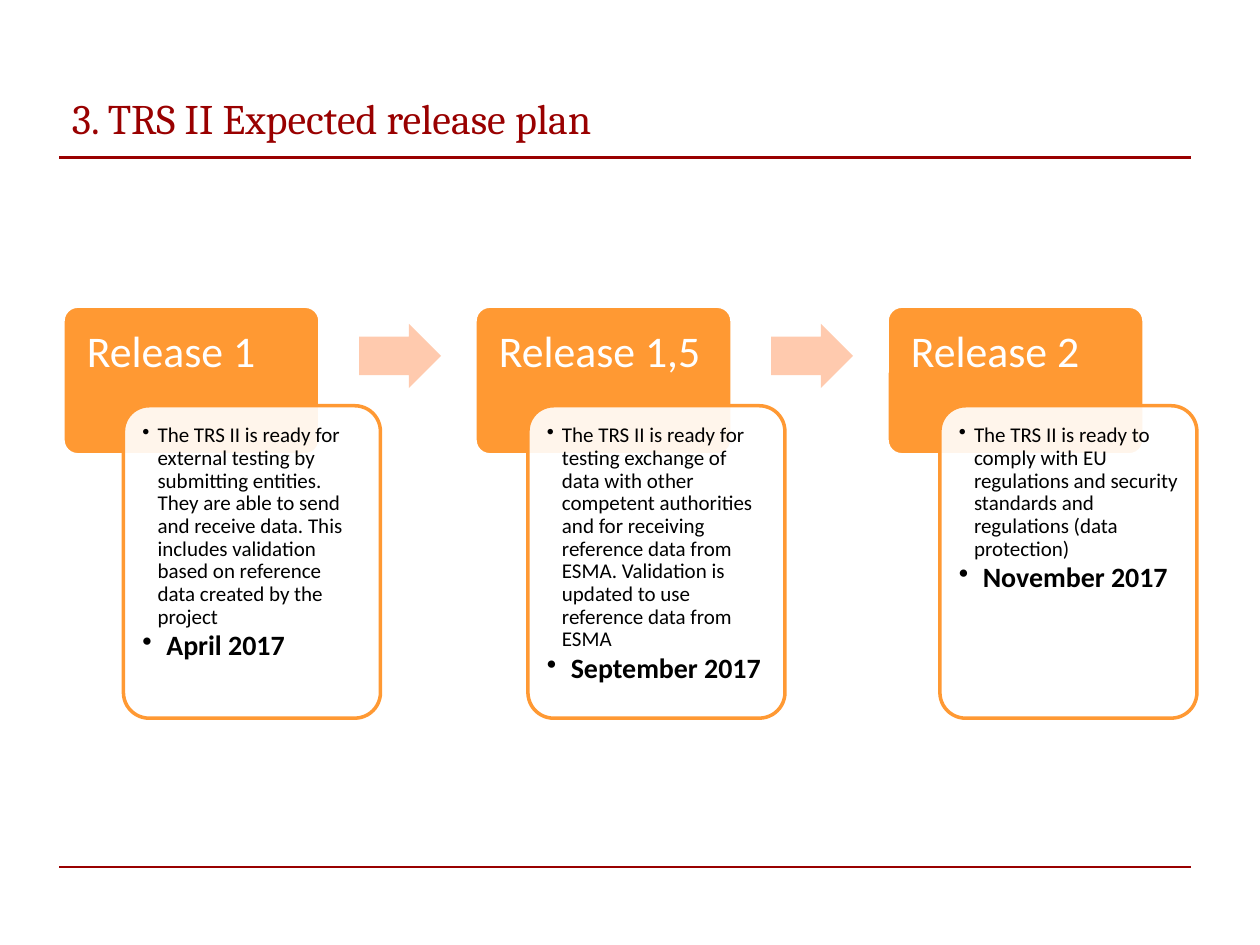
from lxml.etree import SubElement
from pptx import Presentation
from pptx.dml.color import RGBColor
from pptx.enum.shapes import MSO_CONNECTOR as Connector, MSO_SHAPE as Shape
from pptx.enum.text import MSO_ANCHOR as Anchor, PP_ALIGN as Align
from pptx.oxml.ns import qn
from pptx.util import Inches, Pt

DARK_RED = RGBColor(0x99, 0x00, 0x00)
ORANGE = RGBColor(0xFF, 0x99, 0x33)
PEACH = RGBColor(0xFF, 0xCA, 0xAE)
WHITE = RGBColor(0xFF, 0xFF, 0xFF)
BLACK = RGBColor(0x00, 0x00, 0x00)

RELEASES = [
    ("Release 1", "The TRS II is ready for external testing by submitting entities. "
     "They are able to send and receive data. This includes validation based on "
     "reference data created by the project", "April 2017", 0.48),
    ("Release 1,5", "The TRS II is ready for testing exchange of data with other "
     "competent authorities and for receiving reference data from ESMA. Validation "
     "is updated to use reference data from ESMA", "September 2017", 0.42),
    ("Release 2", "The TRS II is ready to comply with EU regulations and security "
     "standards and regulations (data protection)", "November 2017", 0.42),
]
FIRST_LEFT, PITCH = 0.5, 3.27
HEADER_TOP, CARD_TOP, ARROW_TOP = 2.43, 3.22, 2.57
BLOCK_WIDTH, CARD_PADDING = 2.04, 0.06


def write(para, text, font="Calibri", size=12, color=BLACK, bold=False,
          align=Align.LEFT, spacing=None, after=None, bullet_indent=None):
    para.alignment = align
    if spacing:
        para.line_spacing = spacing
    if after is not None:
        para.space_after = Pt(after)
    if bullet_indent:
        properties = para._p.get_or_add_pPr()
        properties.set("marL", str(Inches(bullet_indent)))
        properties.set("indent", str(-Inches(bullet_indent)))
        SubElement(properties, qn("a:buChar"), char="•")
    span = para.add_run()
    span.text = text
    span.font.name = font
    span.font.size = Pt(size)
    span.font.bold = bold
    span.font.color.rgb = color


class ReleaseSlide:
    heading_font = "Cambria"
    line_width = Pt(2)

    def __init__(self, deck):
        self.page = deck.slides.add_slide(deck.slide_layouts[5])

    def title(self, text, left, top, width, height):
        box = self.page.shapes.title
        box.left, box.top = Inches(left), Inches(top)
        box.width, box.height = Inches(width), Inches(height)
        box.text_frame.vertical_anchor = Anchor.MIDDLE
        write(box.text_frame.paragraphs[0], text, font=self.heading_font,
              size=24, color=DARK_RED)

    def rule(self, left, right, top):
        line = self.page.shapes.add_connector(
            Connector.STRAIGHT, Inches(left), Inches(top), Inches(right), Inches(top))
        line.line.color.rgb = DARK_RED
        line.line.width = Pt(1.25)
        SubElement(line._element.spPr, qn("a:effectLst"))

    def shape(self, kind, left, top, width, height, fill, outline=None,
              adjustments=(0.1,), opacity=None):
        block = self.page.shapes.add_shape(
            kind, Inches(left), Inches(top), Inches(width), Inches(height))
        block.shadow.inherit = False
        for index, value in enumerate(adjustments):
            block.adjustments[index] = value
        block.fill.solid()
        block.fill.fore_color.rgb = fill
        if opacity:
            color = block._element.spPr.find(qn("a:solidFill"))[0]
            SubElement(color, qn("a:alpha"), val=str(opacity * 1000))
        if outline is None:
            block.line.fill.background()
        else:
            block.line.color.rgb = outline
            block.line.width = self.line_width

    def text(self, left, top, width, height, insets):
        box = self.page.shapes.add_textbox(
            Inches(left), Inches(top), Inches(width), Inches(height))
        frame = box.text_frame
        frame.word_wrap = True
        frame.vertical_anchor = Anchor.TOP
        (frame.margin_left, frame.margin_top,
         frame.margin_right, frame.margin_bottom) = map(Inches, insets)
        return frame

    def header(self, name, left):
        self.shape(Shape.ROUNDED_RECTANGLE, left, HEADER_TOP, BLOCK_WIDTH, 1.18,
                   ORANGE, WHITE)
        frame = self.text(left, HEADER_TOP, BLOCK_WIDTH, 0.79, (0.19, 0.19, 0.19, 0.1))
        write(frame.paragraphs[0], name, size=25, color=WHITE, spacing=0.9)

    def card(self, description, date, left):
        height = 2.48
        self.shape(Shape.ROUNDED_RECTANGLE, left, CARD_TOP, BLOCK_WIDTH, height,
                   WHITE, ORANGE, opacity=90)
        frame = self.text(left + CARD_PADDING, CARD_TOP + CARD_PADDING,
                          BLOCK_WIDTH - 2 * CARD_PADDING, height - 2 * CARD_PADDING,
                          (0.09,) * 4)
        write(frame.paragraphs[0], description, spacing=0.9, after=1.8,
              bullet_indent=0.12)
        write(frame.add_paragraph(), date, size=16, bold=True, spacing=0.9,
              after=2.4, bullet_indent=0.19)

    def arrow(self, left):
        self.shape(Shape.RIGHT_ARROW, left, ARROW_TOP, 0.65, 0.51, PEACH,
                   adjustments=(0.6, 0.5))


def main():
    deck = Presentation()
    deck.slide_width, deck.slide_height = Inches(10), Inches(7.5)
    slide = ReleaseSlide(deck)
    for top in (1.25, 6.88):
        slide.rule(0.47, 9.45, top)
    slide.title("3. TRS II Expected release plan", 0.47, 0.59, 9, 0.69)
    for index, (name, description, date, card_shift) in enumerate(RELEASES):
        left = FIRST_LEFT + index * PITCH
        slide.header(name, left)
        slide.card(description, date, left + card_shift)
        if index < len(RELEASES) - 1:
            slide.arrow(left + 2.35)
    deck.save("out.pptx")


if __name__ == "__main__":
    main()
